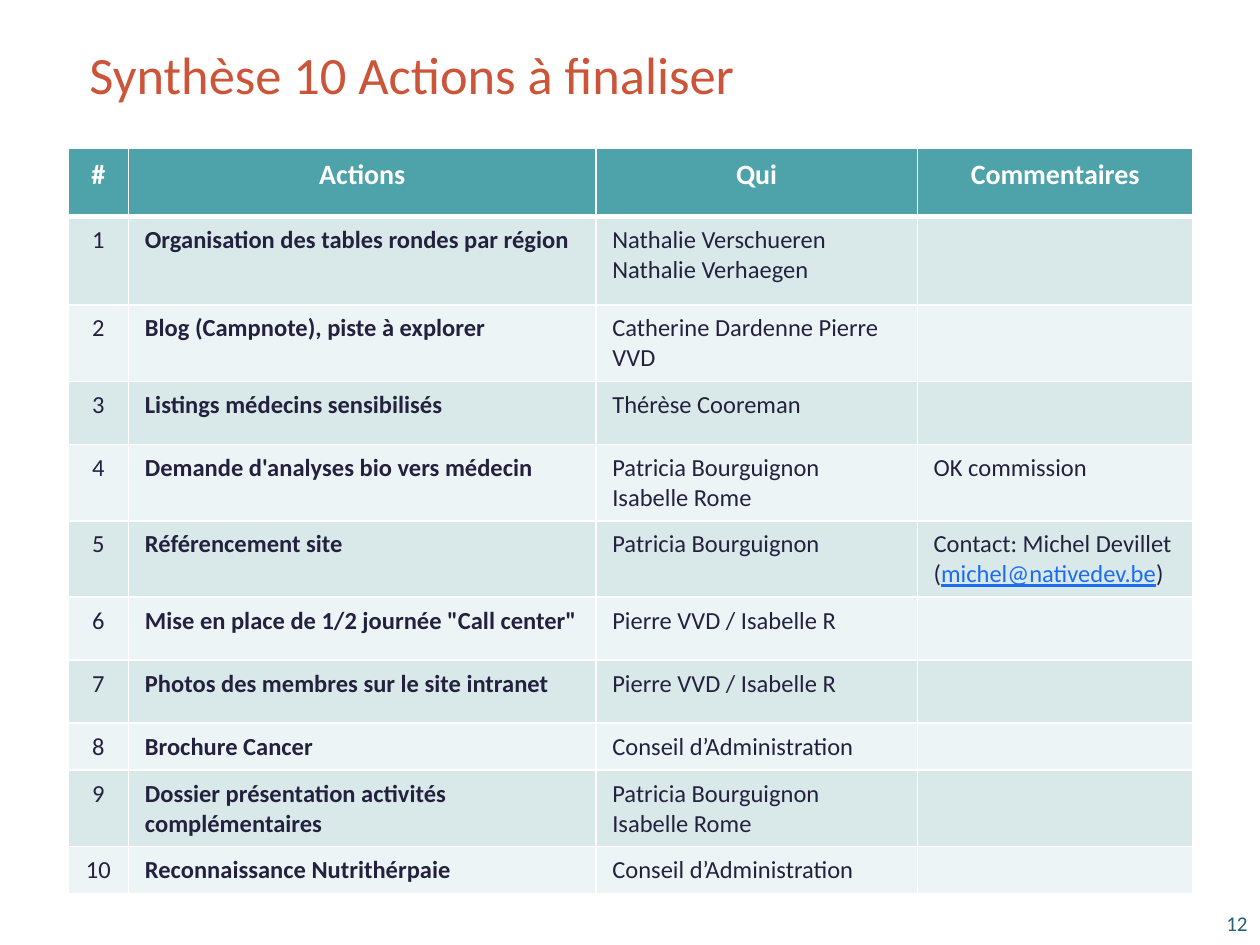
from lxml import etree
from pptx import Presentation
from pptx.dml.color import RGBColor
from pptx.enum.text import MSO_ANCHOR, PP_ALIGN
from pptx.oxml.ns import qn
from pptx.util import Inches, Pt

LEFT, CENTER, RIGHT = PP_ALIGN.LEFT, PP_ALIGN.CENTER, PP_ALIGN.RIGHT
MIDDLE = MSO_ANCHOR.MIDDLE

FONT = "Calibri"
WHITE = RGBColor(0xFF, 0xFF, 0xFF)
ORANGE = RGBColor(0xCC, 0x54, 0x39)
TEAL = RGBColor(0x4E, 0xA2, 0xA9)
DARK_TEAL = RGBColor(0x24, 0x63, 0x72)
INK = RGBColor(0x24, 0x21, 0x3E)
LINK_BLUE = RGBColor(0x1C, 0x6C, 0xF1)
BANDS = (RGBColor(0xD9, 0xE9, 0xEA), RGBColor(0xED, 0xF4, 0xF5))

EMAIL = "michel@nativedev.be"
HEADERS = ("#", "Actions", "Qui", "Commentaires")
ACTIONS = (
    ("Organisation des tables rondes par région",
     "Nathalie Verschueren Nathalie Verhaegen", ""),
    ("Blog (Campnote), piste à explorer", "Catherine Dardenne Pierre VVD", ""),
    ("Listings médecins sensibilisés", "Thérèse Cooreman", ""),
    ("Demande d'analyses bio vers médecin",
     "Patricia Bourguignon\nIsabelle Rome", "OK commission"),
    ("Référencement site", "Patricia Bourguignon",
     f"Contact: Michel Devillet ({EMAIL})"),
    ('Mise en place de 1/2 journée "Call center"', "Pierre VVD / Isabelle R", ""),
    ("Photos des membres sur le site intranet", "Pierre VVD / Isabelle R", ""),
    ("Brochure Cancer", "Conseil d’Administration", ""),
    ("Dossier présentation activités complémentaires",
     "Patricia Bourguignon\nIsabelle Rome", ""),
    ("Reconnaissance Nutrithérpaie", "Conseil d’Administration", ""),
)
COLUMN_WIDTHS = (0.48, 3.71, 2.55, 2.19)
ROW_HEIGHTS = (0.54, 0.7, 0.6, 0.5, 0.57, 0.6, 0.5, 0.5, 0.33, 0.33, 0.33)


def format_span(span, size, color, bold=False):
    span.font.name = FONT
    span.font.size = Pt(size)
    span.font.bold = bold
    span.font.color.rgb = color


def write_text(frame, text, size, color, bold=False, align=LEFT):
    frame.text = text
    for para in frame.paragraphs:
        para.alignment = align
        for span in para.runs:
            format_span(span, size, color, bold)


def add_title(page, text):
    title = page.shapes.title
    title.left, title.top = Inches(0.61), Inches(0.28)
    title.width, title.height = Inches(6.58), Inches(0.61)
    title.text_frame.vertical_anchor = MIDDLE
    write_text(title.text_frame, text, 30, ORANGE)


def add_page_number(page, number):
    box = page.shapes.add_textbox(Inches(9.27), Inches(7.18), Inches(0.73), Inches(0.3))
    box.text_frame.word_wrap = True
    write_text(box.text_frame, number, 12, DARK_TEAL, align=RIGHT)


def set_borders(cell, bottom_width):
    properties = cell._tc.get_or_add_tcPr()
    for side, width in (("L", 1), ("R", 1), ("T", 1), ("B", bottom_width)):
        line = etree.SubElement(properties, qn(f"a:ln{side}"), w=str(Pt(width)))
        fill = etree.SubElement(line, qn("a:solidFill"))
        etree.SubElement(fill, qn("a:srgbClr"), val=str(WHITE))


def fill_cell(cell, text, size, color, background, bold, align, bottom_width=1):
    cell.margin_left = cell.margin_right = Inches(0.13)
    cell.margin_top = cell.margin_bottom = Inches(0.07)
    write_text(cell.text_frame, text, size, color, bold, align)
    if not text:
        # An empty cell still takes the line height of its end mark.
        end_mark = cell.text_frame.paragraphs[0]._p.get_or_add_endParaRPr()
        end_mark.set("sz", str(size * 100))
    set_borders(cell, bottom_width)
    cell.fill.solid()
    cell.fill.fore_color.rgb = background


def mark_email(cell, size):
    """Split the paragraph around the e-mail address and style the address."""
    para = cell.text_frame.paragraphs[0]
    before, after = para.text.split(EMAIL)
    para.text = before
    for text, color in ((EMAIL, LINK_BLUE), (after, INK)):
        span = para.add_run()
        span.text = text
        format_span(span, size, color)
        span.font.underline = color == LINK_BLUE
    format_span(para.runs[0], size, INK)


def add_actions_table(page):
    frame = page.shapes.add_table(
        len(ROW_HEIGHTS), len(COLUMN_WIDTHS), Inches(0.54), Inches(1.18),
        Inches(sum(COLUMN_WIDTHS)), Inches(sum(ROW_HEIGHTS)))
    table = frame.table
    for column, width in zip(table.columns, COLUMN_WIDTHS):
        column.width = Inches(width)
    for row, height in zip(table.rows, ROW_HEIGHTS):
        row.height = Inches(height)

    for column, header in enumerate(HEADERS):
        fill_cell(table.cell(0, column), header, 16, WHITE, TEAL, True, CENTER, 3)
    for number, action in enumerate(ACTIONS, start=1):
        background = BANDS[(number - 1) % 2]
        for column, text in enumerate((str(number), *action)):
            cell = table.cell(number, column)
            align = CENTER if column == 0 else LEFT
            fill_cell(cell, text, 14, INK, background, column == 1, align)
            if EMAIL in text:
                mark_email(cell, 14)


def main():
    deck = Presentation()
    deck.slide_width, deck.slide_height = Inches(10), Inches(7.5)
    page = deck.slides.add_slide(deck.slide_layouts.get_by_name("Title Only"))
    add_page_number(page, "12")
    add_actions_table(page)
    add_title(page, "Synthèse 10 Actions à finaliser")
    deck.save("out.pptx")


if __name__ == "__main__":
    main()
